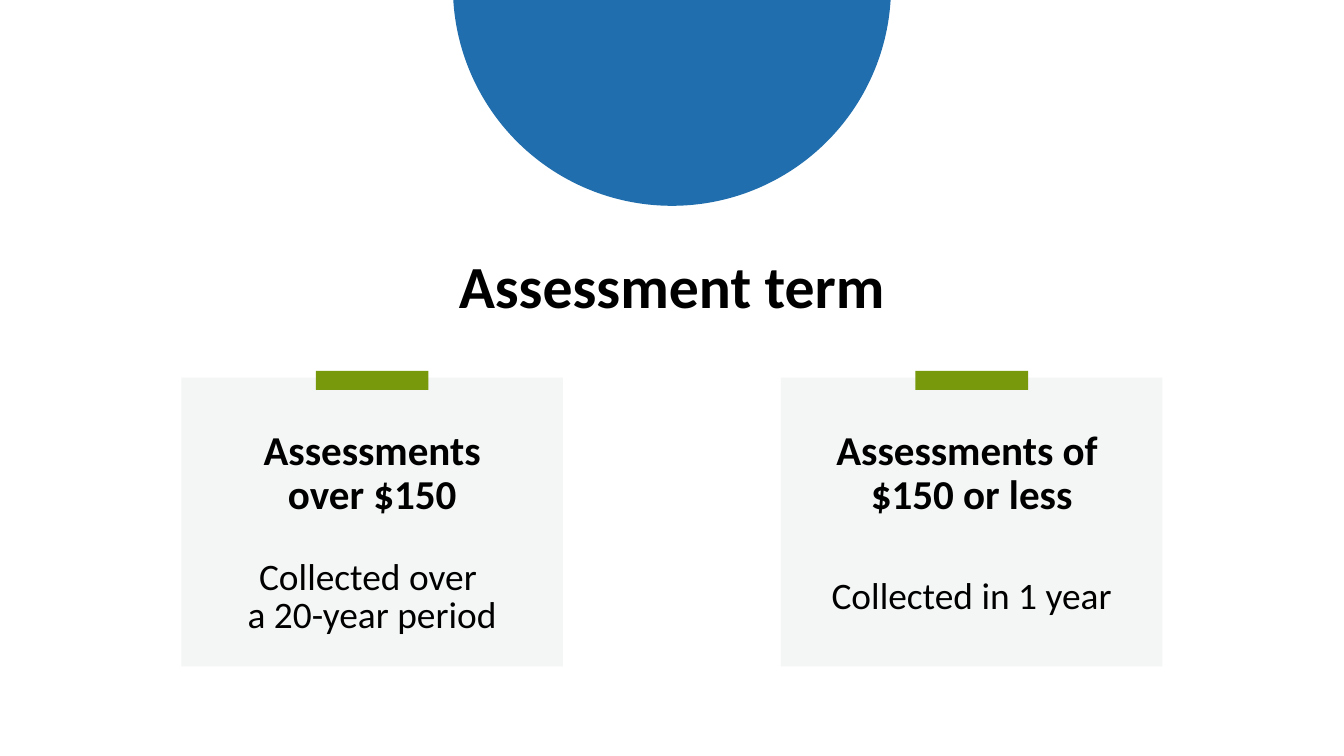
from pptx import Presentation
from pptx.dml.color import RGBColor
from pptx.enum import shapes, text
from pptx.util import Cm, Pt

HEADING = "Assessment term"
CARDS = [
    ("Assessments\nover $150", "Collected over \va 20-year period"),
    ("Assessments of \v$150 or less", "Collected in 1 year"),
]

THEME = {
    "font": "Calibri",
    "ink": "000000",
    "circle": "206EAD",
    "card": "F4F5F5",
    "tab": "77990B",
    "heading": {"size": 32, "bold": True, "spacing": 0.9},
    "label": {"size": 22, "bold": True, "spacing": 0.9},
    "detail": {"size": 20, "bold": False, "spacing": 0.85},
}

SLIDE_W, SLIDE_H = 25.4, 14.29
CIRCLE_SIZE, CIRCLE_TOP = 8.28, -4.39
HEADING_W, HEADING_TOP, HEADING_H = 22.66, 4.27, 2.39
CARD_W, CARD_H, CARD_TOP, SIDE_MARGIN = 7.21, 5.46, 7.14, 3.43
TAB_W, TAB_H, TAB_TOP = 2.13, 0.36, 7.01
LABEL_TOP, DETAIL_TOP, LINES_H = 7.95, 10.29, 2.03


def add_block(slide, kind, color, left, top, width, height):
    block = slide.shapes.add_shape(kind, Cm(left), Cm(top), Cm(width), Cm(height))
    block.shadow.inherit = False
    block.fill.solid()
    block.fill.fore_color.rgb = RGBColor.from_string(THEME[color])
    block.line.fill.background()


def add_words(slide, words, style, left, top, width, height):
    look = THEME[style]
    frame = slide.shapes.add_textbox(Cm(left), Cm(top), Cm(width), Cm(height)).text_frame
    frame.word_wrap = True
    frame.vertical_anchor = text.MSO_ANCHOR.MIDDLE
    frame.text = words
    for paragraph in frame.paragraphs:
        paragraph.alignment = text.PP_ALIGN.CENTER
        paragraph.line_spacing = look["spacing"]
        for run in paragraph.runs:
            run.font.name = THEME["font"]
            run.font.size = Pt(look["size"])
            run.font.bold = look["bold"]
            run.font.color.rgb = RGBColor.from_string(THEME["ink"])


def add_card(slide, left, label, detail):
    rectangle = shapes.MSO_SHAPE.RECTANGLE
    add_block(slide, rectangle, "card", left, CARD_TOP, CARD_W, CARD_H)
    add_words(slide, label, "label", left, LABEL_TOP, CARD_W, LINES_H)
    tab_left = left + (CARD_W - TAB_W) / 2
    add_block(slide, rectangle, "tab", tab_left, TAB_TOP, TAB_W, TAB_H)
    add_words(slide, detail, "detail", left, DETAIL_TOP, CARD_W, LINES_H)


def main():
    deck = Presentation()
    deck.slide_width, deck.slide_height = Cm(SLIDE_W), Cm(SLIDE_H)
    slide = deck.slides.add_slide(deck.slide_layouts[6])

    circle_left = (SLIDE_W - CIRCLE_SIZE) / 2
    add_block(slide, shapes.MSO_SHAPE.OVAL, "circle",
              circle_left, CIRCLE_TOP, CIRCLE_SIZE, CIRCLE_SIZE)
    heading_left = (SLIDE_W - HEADING_W) / 2
    add_words(slide, HEADING, "heading", heading_left, HEADING_TOP, HEADING_W, HEADING_H)

    step = (SLIDE_W - 2 * SIDE_MARGIN - CARD_W) / (len(CARDS) - 1)
    for column, (label, detail) in enumerate(CARDS):
        add_card(slide, SIDE_MARGIN + column * step, label, detail)

    deck.save("out.pptx")


if __name__ == "__main__":
    main()
